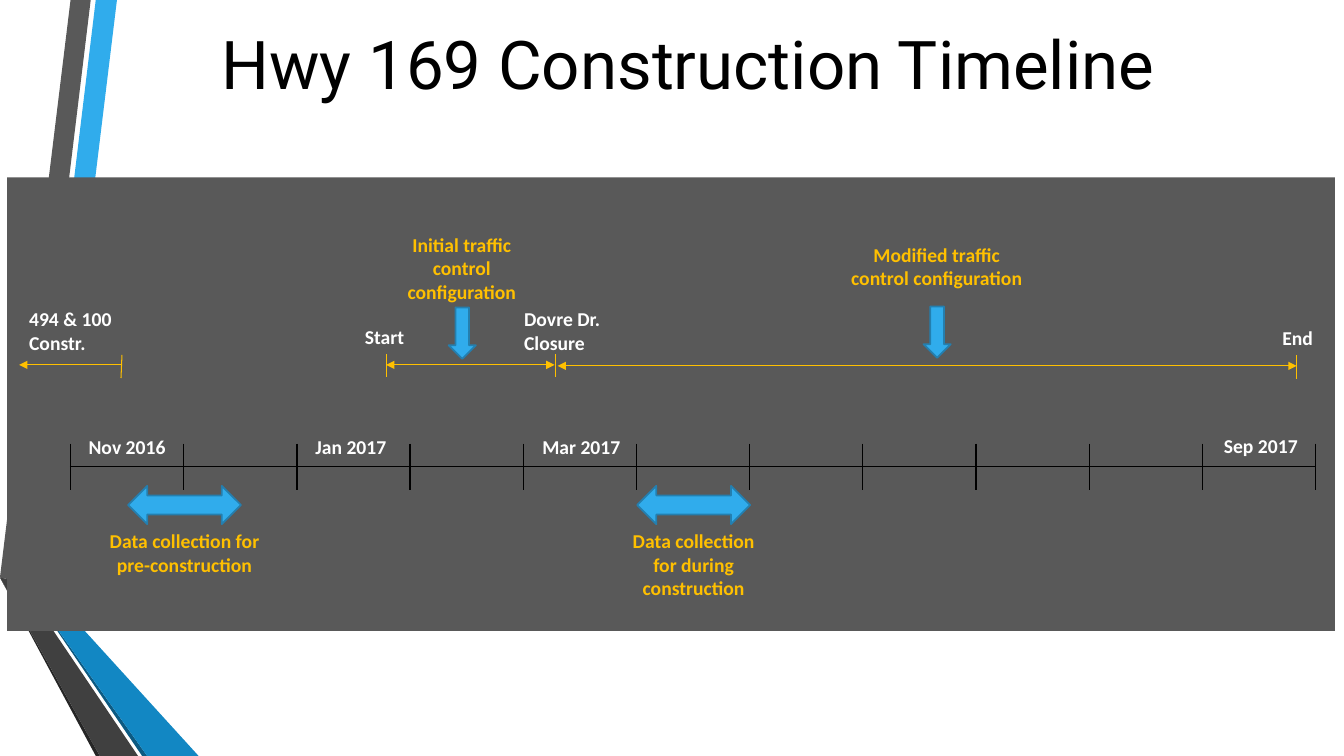
import pptx
import pptx.util
from pptx.dml.color import RGBColor
from pptx.enum.shapes import MSO_CONNECTOR, MSO_SHAPE
from pptx.enum.text import MSO_ANCHOR, PP_ALIGN
from pptx.oxml.ns import qn
from lxml import etree

PX = 9144  # 100 px to the inch

BLACK = RGBColor(0x00, 0x00, 0x00)
WHITE = RGBColor(0xFF, 0xFF, 0xFF)
GOLD = RGBColor(0xFF, 0xC0, 0x00)
GRAY = RGBColor(0x59, 0x59, 0x59)
DARK_GRAY = RGBColor(0x40, 0x40, 0x40)
DEEP_GRAY = RGBColor(0x26, 0x26, 0x26)
BLUE = RGBColor(0x30, 0xAC, 0xEC)
BLUE_EDGE = RGBColor(0x24, 0x7F, 0xAF)
MID_BLUE = RGBColor(0x12, 0x87, 0xC3)
DEEP_BLUE = RGBColor(0x0C, 0x5A, 0x82)

RIBBONS = [
    (BLUE, [(25, 578), (45, 583), (116, 0), (95, 0)]),
    (GRAY, [(90, 0), (70, 0), (0, 573), (20, 577)]),
    (DEEP_GRAY, [(0, 573), (95, 750), (99, 750)]),
    (DEEP_BLUE, [(25, 579), (141, 750), (146, 750)]),
    (MID_BLUE, [(25, 579), (146, 750), (197, 750), (45, 583), (25, 578)]),
    (DARK_GRAY, [(137, 750), (24, 583), (20, 577), (0, 573), (99, 750)]),
]

MONTHS = 11
MONTH_WIDTH = 112
ROW_HEIGHT = 23


def emu(*lengths):
    return [pptx.util.Emu(n * PX) for n in lengths]


def paint(sp, fill, edge=None):
    sp.shadow.inherit = False
    sp.fill.solid()
    sp.fill.fore_color.rgb = fill
    if edge is None:
        sp.line.fill.background()
    else:
        sp.line.color.rgb = edge
        sp.line.width = pptx.util.Pt(1.25)


def add_ribbon(s, color, points):
    builder = s.shapes.build_freeform(*points[0], scale=PX)
    builder.add_line_segments(points[1:], close=True)
    paint(builder.convert_to_shape(), color)


def add_block(s, kind, box, fill, edge=None):
    paint(s.shapes.add_shape(kind, *emu(*box)), fill, edge)


def add_text(s, text, box, color=WHITE, align=PP_ALIGN.LEFT,
             font="Calibri", size=14, bold=True, anchor=MSO_ANCHOR.TOP):
    tf = s.shapes.add_textbox(*emu(*box)).text_frame
    tf.word_wrap = True
    tf.vertical_anchor = anchor
    tf.text = text
    p = tf.paragraphs[0]
    p.alignment = align
    r = p.runs[0]
    r.font.name = font
    r.font.size = pptx.util.Pt(size)
    r.font.bold = bold
    r.font.color.rgb = color


def add_line(s, start, end, arrows=()):
    """Draw a gold line; arrows lists the ends to tip: headEnd, tailEnd."""
    line = s.shapes.add_connector(MSO_CONNECTOR.STRAIGHT, *emu(*start, *end))
    line.line.color.rgb = GOLD
    line.line.width = pptx.util.Pt(0.75)
    ln = line.line._get_or_add_ln()
    for arrow in arrows:
        etree.SubElement(ln, qn("a:" + arrow), type="triangle")
    etree.SubElement(line._element.spPr, qn("a:effectLst"))


def set_borders(cell, black_sides):
    tc_pr = cell._tc.get_or_add_tcPr()
    for i, side in enumerate("LRTB"):
        ln = etree.Element(qn("a:ln" + side), w=str(pptx.util.Pt(1)))
        if side in black_sides:
            fill = etree.SubElement(ln, qn("a:solidFill"))
            etree.SubElement(fill, qn("a:srgbClr"), val=str(BLACK))
        else:
            etree.SubElement(ln, qn("a:noFill"))
        tc_pr.insert(i, ln)


def add_month_scale(s, left, top):
    box = (left, top, MONTHS * MONTH_WIDTH, 2 * ROW_HEIGHT)
    table = s.shapes.add_table(2, MONTHS, *emu(*box)).table
    table.first_row = False
    table.horz_banding = False
    # The total width of 1235 px is shared evenly by the months.
    for column in table.columns:
        column.width = pptx.util.Emu(1235 * PX // MONTHS)
    for row, sides in zip(table.rows, ("LRB", "LRT")):
        for cell in row.cells:
            cell.margin_top = cell.margin_bottom = 0
            cell.fill.background()
            set_borders(cell, sides)
            p = cell.text_frame.paragraphs[0]
            etree.SubElement(p._p, qn("a:endParaRPr"), sz="800")


def main():
    prs = pptx.Presentation()
    prs.slide_width, prs.slide_height = emu(1333, 750)
    s = prs.slides.add_slide(prs.slide_layouts[6])

    for color, points in RIBBONS:
        add_ribbon(s, color, points)
    add_block(s, MSO_SHAPE.RECTANGLE, (7, 176, 1317, 450), GRAY)
    add_text(s, "Hwy 169 Construction Timeline", (108, 0, 1149, 124), BLACK,
             PP_ALIGN.CENTER, "Roboto", 48, False, MSO_ANCHOR.MIDDLE)
    add_month_scale(s, 70, 440)

    both = ("headEnd", "tailEnd")
    for start, end, arrows in [
        ((120, 362), (19, 362), ("tailEnd",)),
        ((383, 362), (550, 362), both),
        ((553, 363), (1286, 363), both),
        ((120, 375), (121, 352), ()),
        ((383, 374), (383, 351), ()),
        ((551, 374), (551, 351), ()),
        ((1286, 376), (1286, 352), ()),
    ]:
        add_line(s, start, end, arrows)

    for text, box in [
        ("494 & 100 Constr.", (19, 300, 125, 57)),
        ("Start", (352, 317, 65, 34)),
        ("End", (1262, 318, 53, 34)),
        ("Dovre Dr. Closure", (510, 300, 107, 57)),
        ("Nov 2016", (78, 427, 102, 34)),
        ("Jan 2017", (303, 427, 97, 34)),
        ("Mar 2017", (528, 427, 102, 34)),
        ("Sep 2017", (1204, 426, 100, 34)),
    ]:
        add_text(s, text, box)

    down, both_ways = MSO_SHAPE.DOWN_ARROW, MSO_SHAPE.LEFT_RIGHT_ARROW
    for text, box, kind, arrow_box in [
        ("Initial traffic control configuration", (372, 226, 172, 81),
         down, (445, 305, 27, 51)),
        ("Modified traffic control configuration", (829, 236, 200, 57),
         down, (916, 304, 27, 51)),
        ("Data collection for during construction", (615, 520, 146, 81),
         both_ways, (632, 482, 112, 38)),
        ("Data collection for pre-construction", (89, 520, 188, 57),
         both_ways, (127, 482, 112, 38)),
    ]:
        add_text(s, text, box, GOLD, PP_ALIGN.CENTER)
        add_block(s, kind, arrow_box, BLUE, BLUE_EDGE)

    prs.save("out.pptx")


if __name__ == "__main__":
    main()
